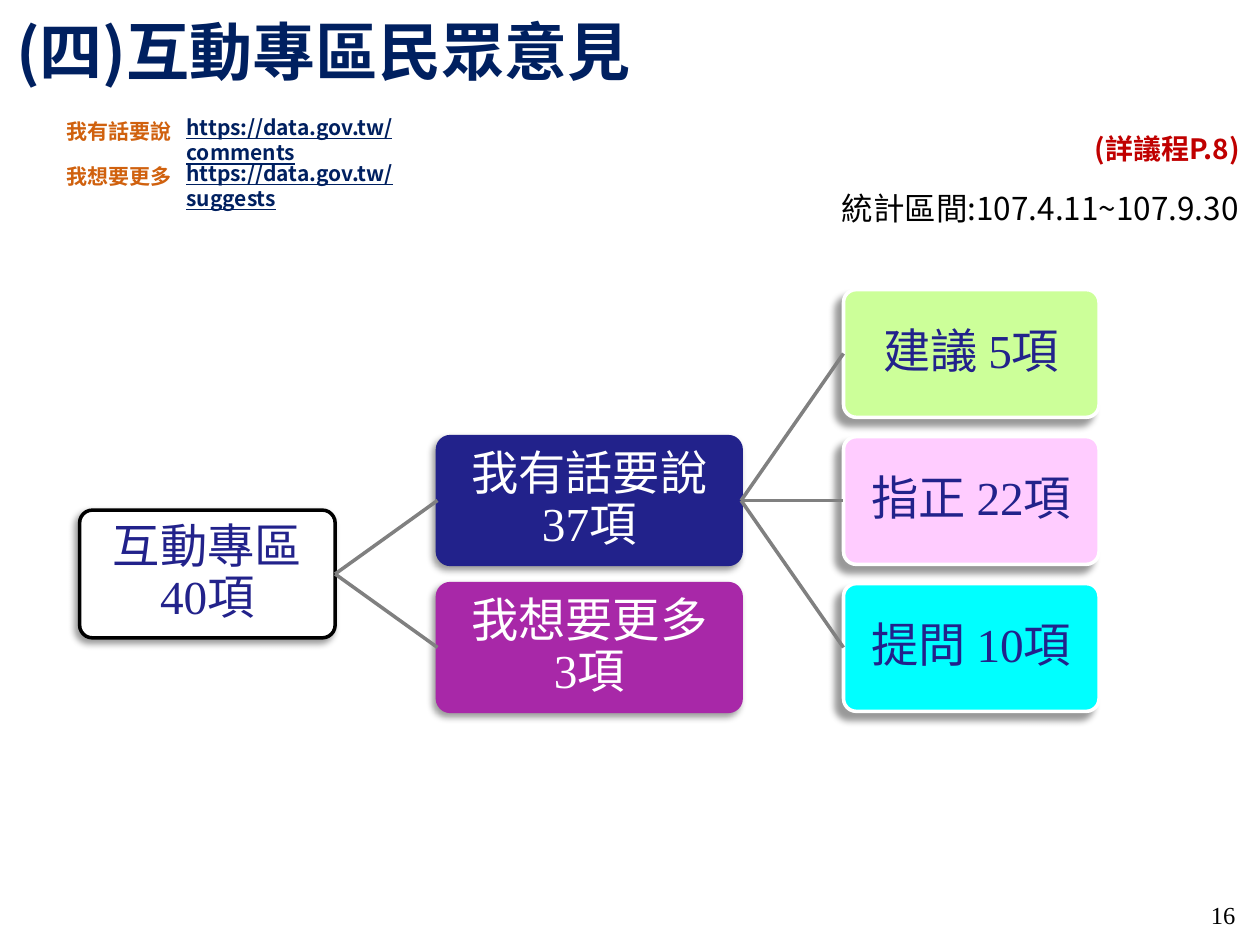
from lxml.etree import SubElement
from pptx import Presentation
from pptx.dml.color import RGBColor
from pptx.enum.shapes import MSO_CONNECTOR, MSO_SHAPE
from pptx.enum.text import MSO_ANCHOR, MSO_AUTO_SIZE, PP_ALIGN
from pptx.oxml.ns import qn
from pptx.util import Pt

COLORS = {
    "navy": "002060", "orange": "D0610E", "red": "C00000", "black": "000000",
    "white": "FFFFFF", "indigo": "22228B", "purple": "A828A8", "lime": "CCFF99",
    "pink": "FFCCFF", "cyan": "00FFFF", "gray": "808080",
}
SANS_SC = "Noto Sans CJK SC"
SANS_TC = "Noto Sans CJK TC"
SERIF = "Times New Roman"

NODE_HEIGHT = 73
ROW_TOP = 165.5
ROW_PITCH = 84
COLUMN_LEFT = 45.5
COLUMN_GAP = 58.5
COLUMN_WIDTHS = [146, 173.5, 146]


def rgb(name):
    return RGBColor.from_string(COLORS[name])


def add_run(p, text, color, name, size, **formats):
    r = p.add_run()
    r.text = text
    r.font.color.rgb = rgb(color)
    for key, value in {"name": name, "size": Pt(size), **formats}.items():
        setattr(r.font, key, value)
    SubElement(r.font._element, qn("a:ea"), typeface=name)


def set_frame(tf, **formats):
    for key, value in formats.items():
        setattr(tf, key, value)


def add_title(s, text, left, top, width, height):
    sp = s.shapes.title
    sp.left, sp.top, sp.width, sp.height = map(Pt, (left, top, width, height))
    set_frame(sp.text_frame, auto_size=MSO_AUTO_SIZE.NONE,
              vertical_anchor=MSO_ANCHOR.TOP, word_wrap=True)
    p = sp.text_frame.paragraphs[0]
    p.alignment = PP_ALIGN.LEFT
    add_run(p, text, "navy", SANS_SC, 36, bold=True)


def add_text(s, text, box, color, name, size, align=PP_ALIGN.LEFT, wrap=True, **formats):
    tf = s.shapes.add_textbox(*map(Pt, box)).text_frame
    tf.word_wrap = wrap
    p = tf.paragraphs[0]
    p.alignment = align
    add_run(p, text, color, name, size, **formats)


def add_shadow(sp, distance):
    sp.shadow.inherit = False
    effects = sp._element.spPr.find(qn("a:effectLst"))
    shadow = SubElement(effects, qn("a:outerShdw"), blurRad=str(Pt(4)),
                        dist=str(Pt(distance)), dir="8100000", rotWithShape="0")
    color = SubElement(shadow, qn("a:srgbClr"), val=COLORS["black"])
    SubElement(color, qn("a:alpha"), val="40000")


def add_node(s, column, row, label, count, fill, line, color, distance=3, two_lines=True):
    left = COLUMN_LEFT + sum(COLUMN_WIDTHS[:column]) + COLUMN_GAP * column
    box = (left, ROW_TOP + ROW_PITCH * row, COLUMN_WIDTHS[column], NODE_HEIGHT)
    sp = s.shapes.add_shape(MSO_SHAPE.ROUNDED_RECTANGLE, *map(Pt, box))
    sp.adjustments[0] = 0.1
    sp.fill.solid()
    sp.fill.fore_color.rgb = rgb(fill)
    sp.line.color.rgb = rgb(line)
    sp.line.width = Pt(2)
    add_shadow(sp, distance)
    margins = {f"margin_{side}": Pt(1.5) for side in ("left", "top", "right", "bottom")}
    set_frame(sp.text_frame, word_wrap=True, vertical_anchor=MSO_ANCHOR.MIDDLE, **margins)
    p = sp.text_frame.paragraphs[0]
    p.alignment = PP_ALIGN.CENTER
    p.line_spacing = 0.9
    add_run(p, label if two_lines else label + " ", color, SANS_SC, 27)
    if two_lines:
        p.add_line_break()
    add_run(p, count, color, SERIF, 27)
    add_run(p, "項", color, SANS_SC, 27)
    return sp


def add_link(s, parent, child):
    cn = s.shapes.add_connector(MSO_CONNECTOR.STRAIGHT, 0, 0, 0, 0)
    cn.begin_connect(parent, 3)
    cn.end_connect(child, 1)
    cn.line.color.rgb = rgb("gray")
    cn.line.width = Pt(2)
    SubElement(cn._element.spPr, qn("a:effectLst"))


def add_tree(s):
    root = add_node(s, 0, 1.5, "互動專區", "40", "white", "black", "indigo")
    comments = add_node(s, 1, 1, "我有話要說", "37", "indigo", "indigo", "white")
    suggests = add_node(s, 1, 2, "我想要更多", "3", "purple", "purple", "white")
    for child in (comments, suggests):
        add_link(s, root, child)
    kinds = [("建議", "5", "lime"), ("指正", "22", "pink"), ("提問", "10", "cyan")]
    for row, (label, count, fill) in enumerate(kinds):
        leaf = add_node(s, 2, row, label, count, fill, "white", "indigo",
                        distance=6, two_lines=False)
        add_link(s, comments, leaf)


def main():
    prs = Presentation()
    prs.slide_width, prs.slide_height = Pt(720), Pt(540)
    s = prs.slides.add_slide(prs.slide_layouts[5])
    add_title(s, "(四)互動專區民眾意見", 2, 3.5, 648, 60.5)
    sources = [
        ("我有話要說", 64, "https://data.gov.tw/comments", 62, 149),
        ("我想要更多", 90, "https://data.gov.tw/suggests", 88, 141),
    ]
    for label, label_top, url, url_top, url_width in sources:
        add_text(s, label, (31, label_top, 75, 22), "orange", SANS_TC, 12,
                 wrap=False, bold=True)
        add_text(s, url, (99.5, url_top, url_width, 22), "navy", SANS_TC, 12,
                 bold=True, underline=True)
    add_text(s, "(詳議程P.8)", (604, 71.5, 111.5, 33), "red", SANS_SC, 16,
             PP_ALIGN.RIGHT, bold=True)
    add_text(s, "統計區間:107.4.11~107.9.30", (448.5, 104.5, 266.5, 29), "black",
             SANS_SC, 18, PP_ALIGN.RIGHT)
    add_tree(s)
    add_text(s, "16", (657.5, 510.5, 55.5, 17), "black", SERIF, 14, PP_ALIGN.RIGHT)
    prs.save("out.pptx")


if __name__ == "__main__":
    main()
